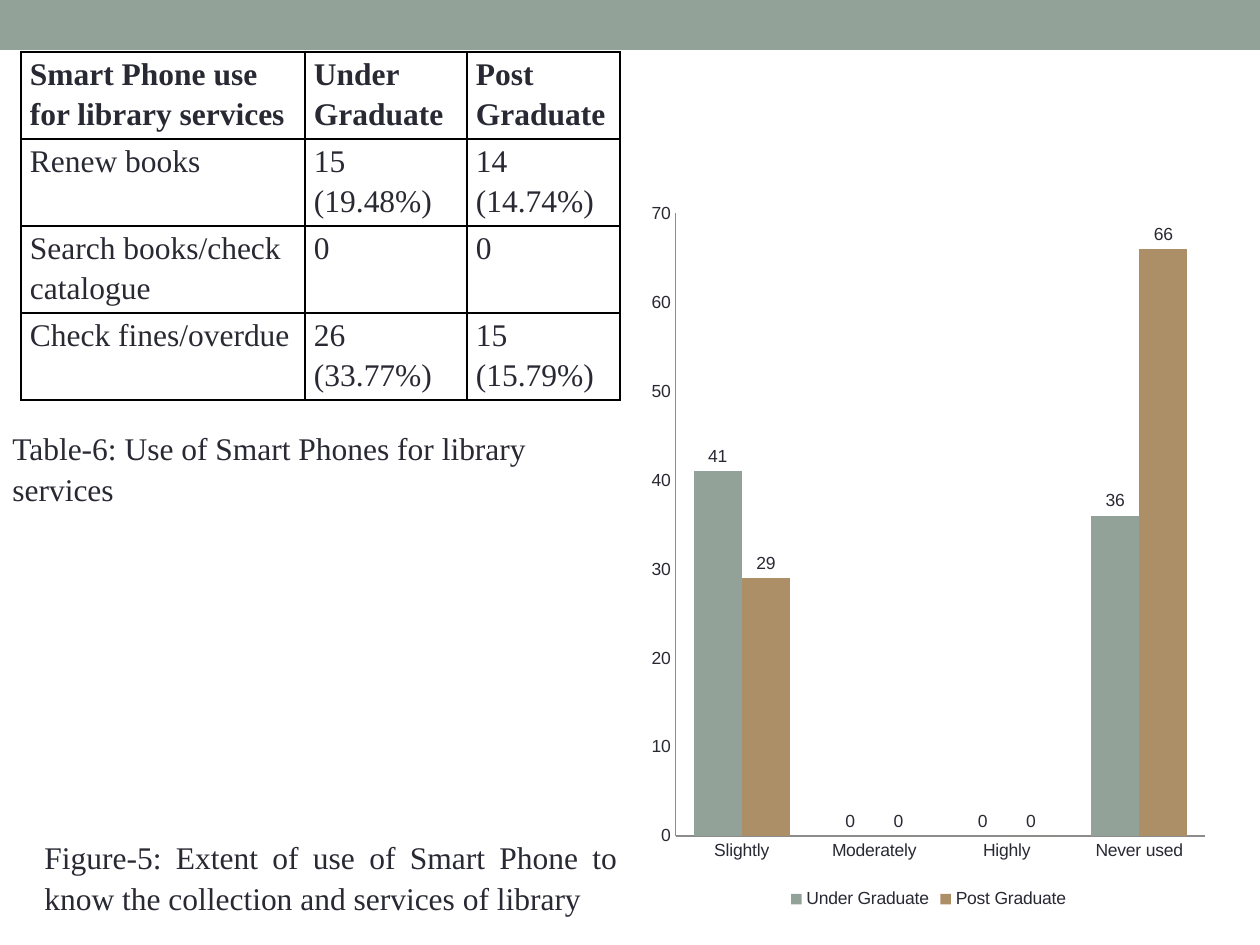
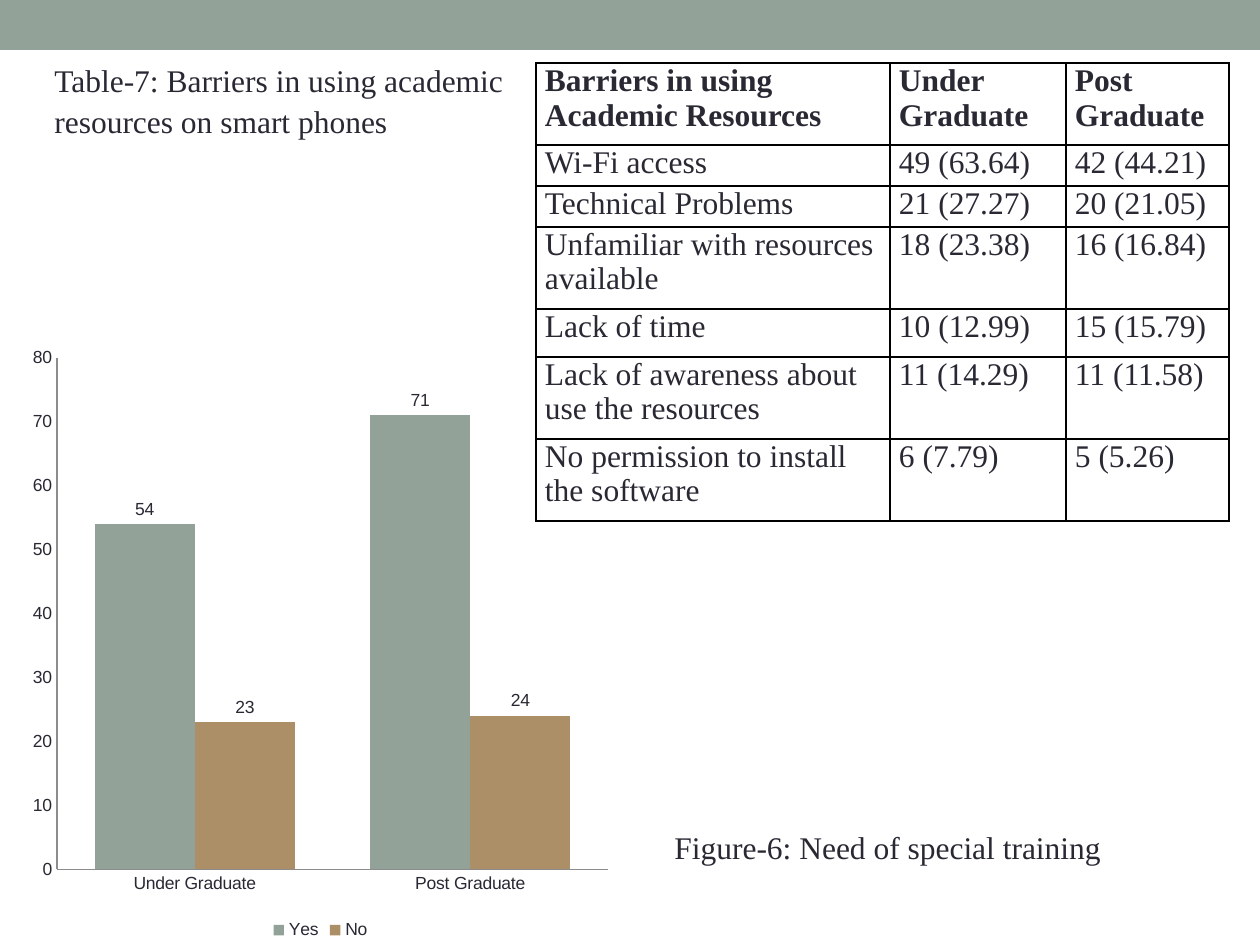
import pptx
import pptx.chart.data
import pptx.dml.color
import pptx.enum.chart
import pptx.enum.shapes
import pptx.enum.text
import pptx.oxml
import pptx.oxml.ns
import pptx.util

PX = 914400 / 126  # EMU in one px
SAGE, TAN, INK, GREY = "93A299", "AD8F67", "292934", "8C8C8C"
SERIF, SANS = "Times New Roman", "Arial"
BORDER = (
    '<a:{} {} w="12700"><a:solidFill><a:srgbClr val="000000"/></a:solidFill></a:{}>'
)

SLIDES = [
    {
        "table_at": (21, 52),
        "cols": (284, 162, 153),
        "rows": (87, 87, 87, 87),
        "spacing": 1.15,
        "cells": [
            ("Smart Phone use for library services", "Under Graduate", "Post Graduate"),
            ("Renew books", "15 (19.48%)", "14 (14.74%)"),
            ("Search books/check catalogue", "0", "0"),
            ("Check fines/overdue", "26 (33.77%)", "15 (15.79%)"),
        ],
        "chart_at": (640, 189, 577, 725),
        "top": 70,
        "cats": ("Slightly", "Moderately", "Highly", "Never used"),
        "series": {"Under Graduate": (41, 0, 0, 36), "Post Graduate": (29, 0, 0, 66)},
        "captions": [
            ((0, 420, 620, 89), "Table-6: Use of Smart Phones for library services", "LEFT"),
            ((32, 829, 598, 89), "Figure-5: Extent of use of Smart Phone to know the "
             "collection and services of library", "JUSTIFY"),
        ],
    },
    {
        "table_at": (536, 63),
        "cols": (354, 176, 163),
        "rows": (82, 41, 41, 82, 48, 82, 82),
        "spacing": 1.0,
        "cells": [
            ("Barriers in using Academic Resources", "Under Graduate", "Post Graduate"),
            ("Wi-Fi access", "49 (63.64)", "42 (44.21)"),
            ("Technical Problems", "21 (27.27)", "20 (21.05)"),
            ("Unfamiliar with resources available", "18 (23.38)", "16 (16.84)"),
            ("Lack of time", "10 (12.99)", "15 (15.79)"),
            ("Lack of awareness about use the resources", "11 (14.29)", "11 (11.58)"),
            ("No permission to install the software", "6 (7.79)", "5 (5.26)"),
        ],
        "chart_at": (21, 336, 599, 609),
        "top": 80,
        "cats": ("Under Graduate", "Post Graduate"),
        "series": {"Yes": (54, 71), "No": (23, 24)},
        "captions": [
            ((42, 52, 494, 89), "Table-7: Barriers in using academic resources on "
             "smart phones", "LEFT"),
            ((662, 819, 514, 53), "Figure-6: Need of special training", "LEFT"),
        ],
    },
]


def rgb(code):
    return pptx.dml.color.RGBColor.from_string(code)


def write(tf, text, size=18, font=SERIF, color=INK, bold=False, align="LEFT", spacing=1.0):
    tf.word_wrap = True
    p = tf.paragraphs[0]
    p.alignment = getattr(pptx.enum.text.PP_ALIGN, align)
    p.line_spacing = spacing
    r = p.add_run()
    r.text = text
    r.font.size = pptx.util.Pt(size)
    r.font.name = font
    r.font.bold = bold
    r.font.color.rgb = rgb(color)


prs = pptx.Presentation()
prs.slide_width = round(1260 * PX)
prs.slide_height = round(945 * PX)

for page in SLIDES:
    s = prs.slides.add_slide(prs.slide_layouts[6])

    # Top band
    band = s.shapes.add_shape(
        pptx.enum.shapes.MSO_SHAPE.RECTANGLE, 0, 0, prs.slide_width, round(50 * PX)
    )
    band.shadow.inherit = False
    band.fill.solid()
    band.fill.fore_color.rgb = rgb(SAGE)
    band.line.fill.background()

    # Table
    cols, rows = page["cols"], page["rows"]
    box = [round(v * PX) for v in (*page["table_at"], sum(cols), sum(rows))]
    table = s.shapes.add_table(len(rows), len(cols), *box).table
    table.first_row = table.horz_banding = False
    for col, width in zip(table.columns, cols):
        col.width = round(width * PX)
    for i, height in enumerate(rows):
        table.rows[i].height = round(height * PX)
        for j, text in enumerate(page["cells"][i]):
            cell = table.cell(i, j)
            cell.margin_left = cell.margin_right = round(9 * PX)
            cell.margin_top = cell.margin_bottom = 0
            write(cell.text_frame, text, bold=i == 0, spacing=page["spacing"])
            tcPr = cell._tc.get_or_add_tcPr()
            for side in ("lnL", "lnR", "lnT", "lnB"):
                xml = BORDER.format(side, pptx.oxml.ns.nsdecls("a"), side)
                tcPr.append(pptx.oxml.parse_xml(xml))
            cell.fill.background()

    # Chart
    data = pptx.chart.data.CategoryChartData()
    data.categories = page["cats"]
    for name, values in page["series"].items():
        data.add_series(name, values)
    box = [round(v * PX) for v in page["chart_at"]]
    chart = s.shapes.add_chart(
        pptx.enum.chart.XL_CHART_TYPE.COLUMN_CLUSTERED, *box, data
    ).chart
    chart.has_title = False
    chart.font.size = pptx.util.Pt(10)
    chart.font.name = SANS
    chart.font.color.rgb = rgb(INK)
    chart.has_legend = True
    chart.legend.position = pptx.enum.chart.XL_LEGEND_POSITION.BOTTOM
    chart.legend.include_in_layout = False
    for axis in (chart.category_axis, chart.value_axis):
        axis.has_major_gridlines = False
        axis.major_tick_mark = pptx.enum.chart.XL_TICK_MARK.NONE
        axis.format.line.color.rgb = rgb(GREY)
    chart.value_axis.minimum_scale = 0
    chart.value_axis.maximum_scale = page["top"]
    chart.value_axis.major_unit = 10
    plot = chart.plots[0]
    plot.vary_by_categories = False
    plot.gap_width = 75
    plot.overlap = 0
    plot.has_data_labels = True
    plot.data_labels.show_value = True
    plot.data_labels.position = pptx.enum.chart.XL_LABEL_POSITION.OUTSIDE_END
    for series, color in zip(plot.series, (SAGE, TAN)):
        series.format.fill.solid()
        series.format.fill.fore_color.rgb = rgb(color)

    # Captions
    for at, text, align in page["captions"]:
        sp = s.shapes.add_textbox(*[round(v * PX) for v in at])
        write(sp.text_frame, text, align=align, spacing=1.08)

prs.save("out.pptx")
